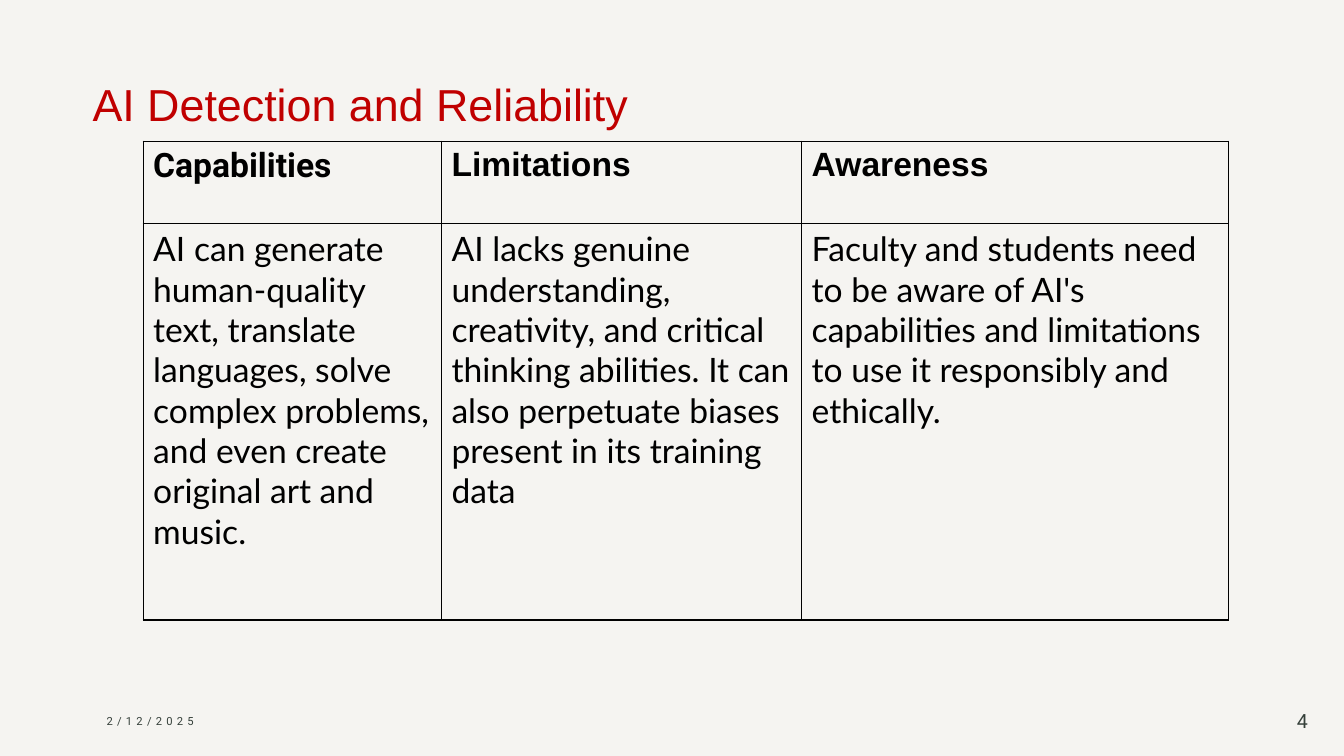
from lxml import etree
from pptx import Presentation
from pptx.dml.color import RGBColor
from pptx.enum.shapes import MSO_SHAPE
from pptx.enum.text import MSO_ANCHOR, PP_ALIGN
from pptx.oxml.ns import qn
from pptx.util import Inches, Pt

RECT = MSO_SHAPE.RECTANGLE
MIDDLE, BOTTOM = MSO_ANCHOR.MIDDLE, MSO_ANCHOR.BOTTOM
LEFT, RIGHT = PP_ALIGN.LEFT, PP_ALIGN.RIGHT

BLACK = RGBColor(0x00, 0x00, 0x00)
RED = RGBColor(0xC0, 0x00, 0x00)
DARK_GREEN = RGBColor(0x35, 0x40, 0x3A)
SAND = RGBColor(0xC0, 0xB7, 0xA5)

HEADINGS = [("Capabilities", "Roboto"), ("Limitations", "Arial"), ("Awareness", "Arial")]
DETAILS = [
    "AI can generate human-quality text, translate languages, solve complex "
    "problems, and even create original art and music.",
    "AI lacks genuine understanding, creativity, and critical thinking abilities. "
    "It can also perpetuate biases present in its training data",
    "Faculty and students need to be aware of AI's capabilities and limitations "
    "to use it responsibly and ethically.",
]


def write(tf, text, font="Roboto", size=24, color=BLACK, bold=False,
          align=LEFT, spacing=None):
    """Fill a text frame with one formatted run; spacing is in points."""
    tf.word_wrap = True
    p = tf.paragraphs[0]
    p.alignment = align
    r = p.add_run()
    r.text = text
    r.font.name, r.font.size, r.font.bold = font, Pt(size), bold
    r.font.color.rgb = color
    if spacing:
        r.font._element.set("spc", str(spacing * 100))


class SlideBuilder:
    """Draws on one slide; all lengths are percentages of its width or height."""

    border_color, border_width = BLACK, Pt(1)

    def __init__(self, prs):
        self.prs = prs
        self.s = prs.slides.add_slide(prs.slide_layouts[6])

    def x(self, share):
        return round(self.prs.slide_width * share / 100)

    def y(self, share):
        return round(self.prs.slide_height * share / 100)

    def box(self, left, top, width, height):
        return self.x(left), self.y(top), self.x(width), self.y(height)

    def backdrop(self, color, opacity):
        sp = self.s.shapes.add_shape(RECT, *self.box(0, 0, 100, 100))
        sp.shadow.inherit = False
        sp.line.fill.background()
        sp.fill.solid()
        sp.fill.fore_color.rgb = color
        clr = sp.fill._xPr.find(qn("a:solidFill"))[0]
        etree.SubElement(clr, qn("a:alpha"), val=str(opacity * 1000))

    def text(self, box, text, anchor=MIDDLE, **fmt):
        tf = self.s.shapes.add_textbox(*self.box(*box)).text_frame
        tf.vertical_anchor = anchor
        write(tf, text, **fmt)

    def table(self, left, top, col_widths, row_heights):
        box = self.box(left, top, sum(col_widths), sum(row_heights))
        table = self.s.shapes.add_table(len(row_heights), len(col_widths), *box).table
        table.first_row = table.horz_banding = False
        for col, width in zip(table.columns, col_widths):
            col.width = self.x(width)
        for row, height in zip(table.rows, row_heights):
            row.height = self.y(height)
        for cell in table.iter_cells():
            self.outline(cell)
            cell.fill.background()
        return table

    def outline(self, cell):
        tcPr = cell._tc.get_or_add_tcPr()
        for side in ("lnL", "lnR", "lnT", "lnB"):
            ln = etree.SubElement(tcPr, qn(f"a:{side}"), w=str(self.border_width))
            fill = etree.SubElement(ln, qn("a:solidFill"))
            etree.SubElement(fill, qn("a:srgbClr"), val=str(self.border_color))


def main():
    prs = Presentation()
    prs.slide_width, prs.slide_height = Inches(13.33), Inches(7.5)
    slide = SlideBuilder(prs)

    slide.backdrop(SAND, opacity=15)
    slide.text((6.15, 5.73, 62.42, 12.13), "AI Detection and Reliability",
               anchor=BOTTOM, font="Arial", size=32, color=RED)
    slide.text((7.2, 92.67, 22.5, 5.33), "2/12/2025",
               size=8, color=DARK_GREEN, spacing=3)
    slide.text((93.77, 92.67, 4.28, 5.33), "4",
               size=14, color=DARK_GREEN, align=RIGHT)

    table = slide.table(10.65, 18.67, [22.2, 26.8, 31.75], [10.93, 52.4])
    for col, ((heading, font), detail) in enumerate(zip(HEADINGS, DETAILS)):
        write(table.cell(0, col).text_frame, heading, font=font, bold=True)
        write(table.cell(1, col).text_frame, detail, font="Lato")

    prs.save("out.pptx")


if __name__ == "__main__":
    main()
